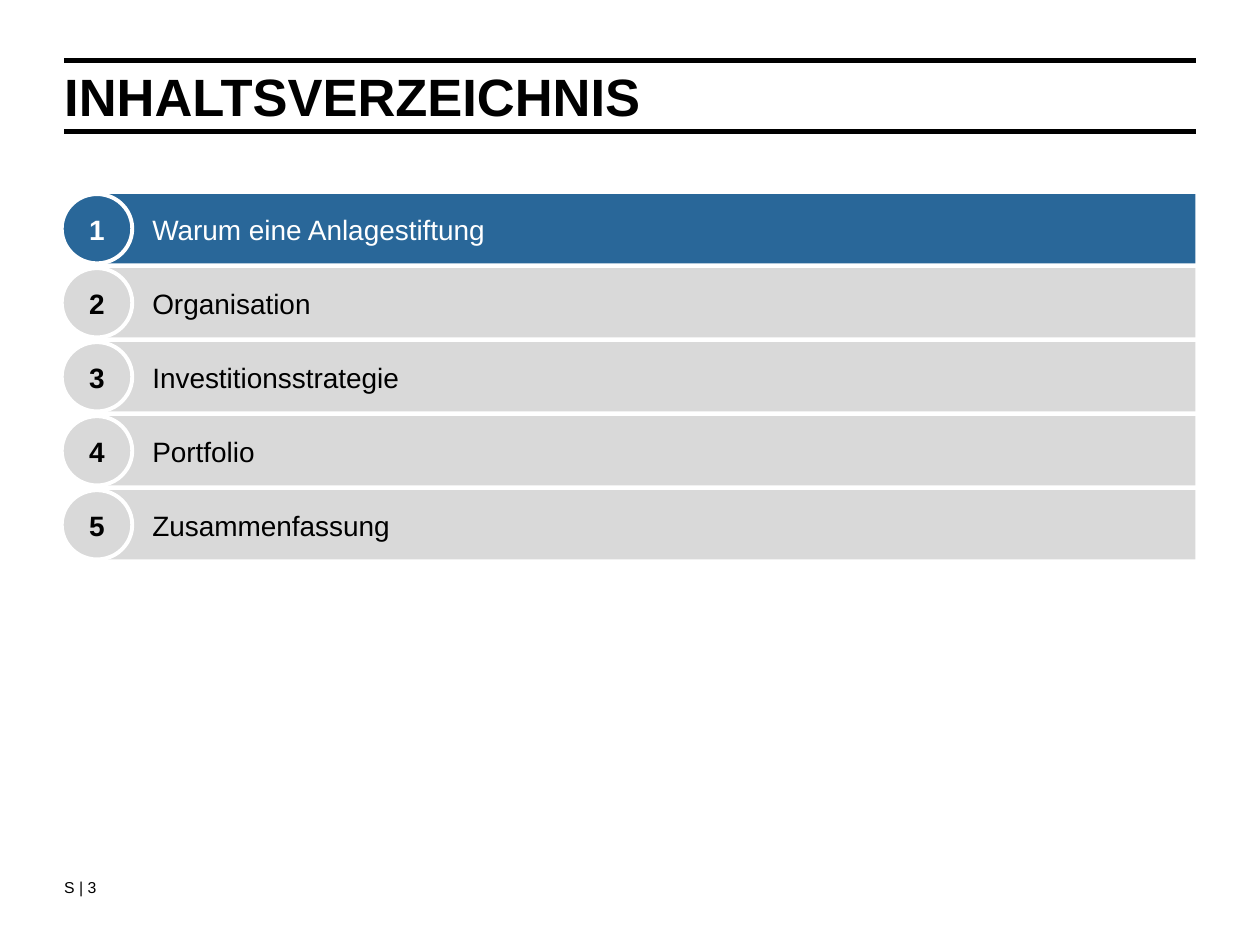
"""Build the table-of-contents slide with its first chapter highlighted."""
from dataclasses import dataclass

import lxml.etree
import pptx
import pptx.dml.color
import pptx.enum.shapes
import pptx.enum.text
import pptx.oxml.ns
import pptx.util

Pt = pptx.util.Pt
ALIGN = pptx.enum.text.PP_ALIGN
ANCHOR = pptx.enum.text.MSO_ANCHOR
SHAPE = pptx.enum.shapes.MSO_SHAPE

COLORS = {"black": "000000", "white": "FFFFFF", "blue": "296799", "gray": "D9D9D9"}
LEFT, RIGHT = 36.7, 683.3
ROW_TOP, ROW_PITCH, ROW_HEIGHT = 110.9, 42.3, 39.6
BAR_LEFT, BAR_WIDTH = 56, 627.1
BADGE_LEFT, BADGE_WIDTH = 35.3, 40.3


@dataclass
class Chapter:
    """A numbered entry of the contents list."""

    number: int
    title: str
    active: bool = False


CHAPTERS = [
    Chapter(1, "Warum eine Anlagestiftung", active=True),
    Chapter(2, "Organisation"),
    Chapter(3, "Investitionsstrategie"),
    Chapter(4, "Portfolio"),
    Chapter(5, "Zusammenfassung"),
]


def rgb(name: str) -> pptx.dml.color.RGBColor:
    """Return the named colour."""
    return pptx.dml.color.RGBColor.from_string(COLORS[name])


def set_text(sp, text: str, size: float, insets: tuple, color: str = "black",
             bold: bool = False, align=ALIGN.LEFT, anchor=ANCHOR.TOP,
             spacing=1.06) -> None:
    """Fill a shape with one formatted paragraph."""
    tf = sp.text_frame
    tf.text = text
    tf.word_wrap = True
    tf.auto_size = pptx.enum.text.MSO_AUTO_SIZE.NONE
    tf.vertical_anchor = anchor
    tf.margin_left, tf.margin_top, tf.margin_right, tf.margin_bottom = map(Pt, insets)
    p = tf.paragraphs[0]
    p.alignment = align
    p.line_spacing = spacing
    font = p.runs[0].font
    font.name, font.size, font.bold = "Arial", Pt(size), bold
    font.color.rgb = rgb(color)


def add_rule(s, y: float) -> None:
    """Draw a horizontal rule across the content width."""
    line = s.shapes.add_connector(pptx.enum.shapes.MSO_CONNECTOR.STRAIGHT,
                                  Pt(LEFT), Pt(y), Pt(RIGHT), Pt(y))
    line.line.width = Pt(2.8)
    line.line.color.rgb = rgb("black")
    lxml.etree.SubElement(line._element.spPr, pptx.oxml.ns.qn("a:effectLst"))


def add_block(s, kind, left: float, top: float, width: float, fill: str):
    """Add a filled shape of row height without outline or shadow."""
    sp = s.shapes.add_shape(kind, Pt(left), Pt(top), Pt(width), Pt(ROW_HEIGHT))
    sp.shadow.inherit = False
    sp.fill.solid()
    sp.fill.fore_color.rgb = rgb(fill)
    sp.line.fill.background()
    return sp


def add_chapter(s, chapter: Chapter) -> None:
    """Draw the bar and the number badge of a chapter."""
    top = ROW_TOP + (chapter.number - 1) * ROW_PITCH
    fill, color = ("blue", "white") if chapter.active else ("gray", "black")
    bar = add_block(s, SHAPE.RECTANGLE, BAR_LEFT, top, BAR_WIDTH, fill)
    set_text(bar, chapter.title, 16, (31, 2.9, 2.9, 2.9), color, anchor=ANCHOR.MIDDLE)
    badge = add_block(s, SHAPE.OVAL, BADGE_LEFT, top, BADGE_WIDTH, fill)
    badge.line.color.rgb = rgb("white")
    badge.line.width = Pt(2.25)
    set_text(badge, str(chapter.number), 16, (2.9, 2.9, 2.9, 2.9), color, bold=True,
             align=ALIGN.CENTER, anchor=ANCHOR.MIDDLE)


def main() -> None:
    """Assemble and save the slide."""
    prs = pptx.Presentation()
    prs.slide_width, prs.slide_height = Pt(720), Pt(540)
    s = prs.slides.add_slide(prs.slide_layouts[5])
    for y in (34.6, 74.9):
        add_rule(s, y)

    title = s.shapes.title
    title.left, title.top = Pt(LEFT), Pt(40.3)
    title.width, title.height = Pt(RIGHT - LEFT), Pt(28.1)
    set_text(title, "INHALTSVERZEICHNIS", 30, (0, 2.2, 0, 0), bold=True, spacing=Pt(30))

    page = s.shapes.add_textbox(Pt(LEFT), Pt(499.7), Pt(54), Pt(20.2))
    set_text(page, "S | 3", 9, (0, 1.4, 0, 0))

    for chapter in CHAPTERS:
        add_chapter(s, chapter)
    prs.save("out.pptx")


if __name__ == "__main__":
    main()
